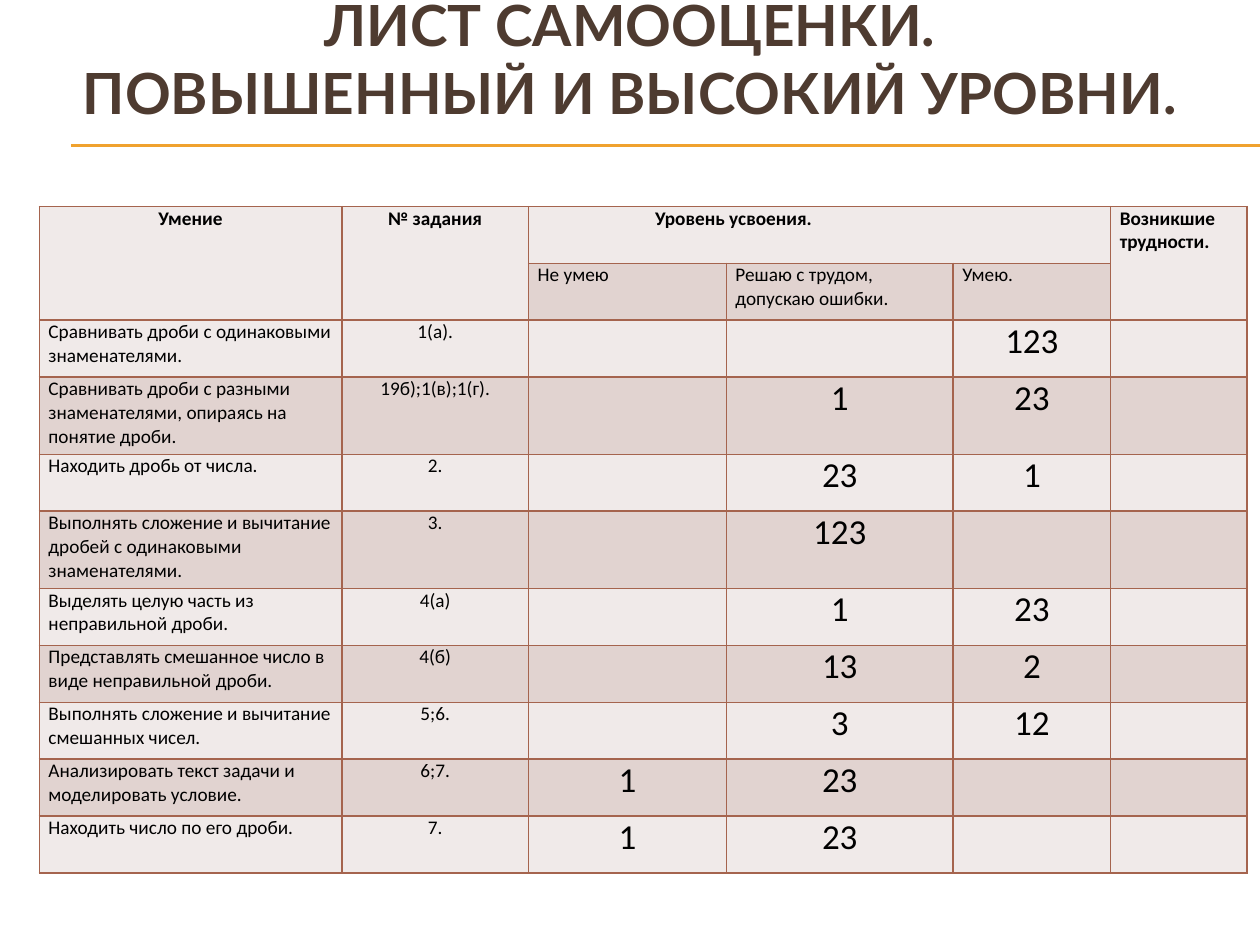
from dataclasses import dataclass

from lxml import etree
from pptx import Presentation
from pptx import util as u
from pptx.dml.color import RGBColor
from pptx.enum import shapes, text
from pptx.oxml.ns import qn


@dataclass(frozen=True)
class Theme:
    title_font: str = "Lato"
    body_font: str = "Calibri"
    title_size: float = 32.4
    body_size: float = 11
    mark_size: float = 20
    title_color: str = "4E3B30"
    body_color: str = "000000"
    rule_color: str = "F0A22E"
    border_color: str = "A5644E"
    light_band: str = "F0EAE9"
    dark_band: str = "E1D3D0"


LEFT, CENTER = text.PP_ALIGN.LEFT, text.PP_ALIGN.CENTER
CELL_INSET = 5.2
LEVEL_INDENT = 67
ROW_HEIGHT, TALL_ROW_HEIGHT = 32.5, 44.2
TALL_ROWS = (3, 5)
HEADER_ROWS = 2
COLUMN_WIDTHS = (172.8, 106.8, 113, 129.6, 90, 78)

TITLE_LINES = ("ЛИСТ САМООЦЕНКИ.", "ПОВЫШЕННЫЙ И ВЫСОКИЙ УРОВНИ.")
HEADINGS = {0: "Умение", 1: "№ задания", 2: "Уровень усвоения.",
            5: "Возникшие трудности."}
LEVELS = {2: "Не умею", 3: "Решаю с трудом, допускаю ошибки.", 4: "Умею."}
# Skill, task numbers, then marks: cannot do, with difficulty, can do
SKILLS = (
    ("Сравнивать дроби с одинаковыми знаменателями.", "1(а).", "", "", "123"),
    ("Сравнивать дроби с разными знаменателями, опираясь на понятие дроби.",
     "19б);1(в);1(г).", "", "1", "23"),
    ("Находить дробь от числа.", "2.", "", "23", "1"),
    ("Выполнять сложение и вычитание дробей с одинаковыми знаменателями.",
     "3.", "", "123", ""),
    ("Выделять целую часть из неправильной дроби.", "4(а)", "", "1", "23"),
    ("Представлять смешанное число в виде неправильной дроби.",
     "4(б)", "", "13", "2"),
    ("Выполнять сложение и вычитание смешанных чисел.", "5;6.", "", "3", "12"),
    ("Анализировать текст задачи и моделировать условие.",
     "6;7.", "1", "23", ""),
    ("Находить число по его дроби.", "7.", "1", "23", ""),
)


class SlideBuilder:
    def __init__(self, slide, theme):
        self.slide = slide
        self.theme = theme

    def run(self, paragraph, words, font, size, color, bold=False):
        run = paragraph.add_run()
        run.text = words
        run.font.name = font
        run.font.size = u.Pt(size)
        run.font.bold = bold
        run.font.color.rgb = RGBColor.from_string(color)

    def title(self, lines, left, top, width, height):
        box = self.slide.shapes.add_textbox(*map(u.Pt, (left, top, width, height)))
        frame = box.text_frame
        frame.word_wrap = True
        frame.vertical_anchor = text.MSO_ANCHOR.MIDDLE
        paragraph = frame.paragraphs[0]
        paragraph.alignment = CENTER
        for number, line in enumerate(lines):
            if number:
                paragraph.add_line_break()
            self.run(paragraph, line, self.theme.title_font,
                     self.theme.title_size, self.theme.title_color, bold=True)

    def rule(self, left, right, y):
        rule = self.slide.shapes.add_connector(
            shapes.MSO_CONNECTOR.STRAIGHT, *map(u.Pt, (left, y, right, y)))
        rule.line.width = u.Pt(0.75)
        rule.line.color.rgb = RGBColor.from_string(self.theme.rule_color)
        etree.SubElement(rule.element.spPr, qn("a:effectLst"))

    def table(self, left, top, widths, heights):
        """Add an empty table with banded fills and borders."""
        table = self.slide.shapes.add_table(
            len(heights), len(widths),
            *map(u.Pt, (left, top, sum(widths), sum(heights)))).table
        table.first_row = table.horz_banding = False
        for column, width in zip(table.columns, widths):
            column.width = u.Pt(width)
        for number, (row, height) in enumerate(zip(table.rows, heights)):
            row.height = u.Pt(height)
            band = self.theme.dark_band if number % 2 else self.theme.light_band
            for cell in row.cells:
                self.borders(cell)
                cell.fill.solid()
                cell.fill.fore_color.rgb = RGBColor.from_string(band)
        return table

    def borders(self, cell):
        properties = cell._tc.get_or_add_tcPr()
        for side in ("lnL", "lnR", "lnT", "lnB"):
            line = etree.SubElement(properties, qn(f"a:{side}"), w=str(u.Pt(1)))
            fill = etree.SubElement(line, qn("a:solidFill"))
            etree.SubElement(fill, qn("a:srgbClr"), val=self.theme.border_color)

    def cell_text(self, cell, words, align=LEFT, size=None, bold=False, indent=0):
        cell.margin_left = u.Pt(CELL_INSET + indent)
        cell.margin_right = u.Pt(CELL_INSET)
        cell.margin_top = cell.margin_bottom = 0
        paragraph = cell.text_frame.paragraphs[0]
        paragraph.alignment = align
        self.run(paragraph, words, self.theme.body_font,
                 size or self.theme.body_size, self.theme.body_color, bold)


def fill_assessment(builder, table):
    for column in (0, 1, 5):
        table.cell(0, column).merge(table.cell(1, column))
    table.cell(0, 2).merge(table.cell(0, 4))

    for column, heading in HEADINGS.items():
        builder.cell_text(table.cell(0, column), heading,
                          CENTER if column < 2 else LEFT, bold=True,
                          indent=LEVEL_INDENT if column == 2 else 0)
    for column, level in LEVELS.items():
        builder.cell_text(table.cell(1, column), level)

    for row, skill in enumerate(SKILLS, HEADER_ROWS):
        for column, words in enumerate(skill):
            if words:
                builder.cell_text(
                    table.cell(row, column), words,
                    CENTER if column else LEFT,
                    builder.theme.mark_size if column in LEVELS else None)


def main():
    deck = Presentation()
    deck.slide_width, deck.slide_height = u.Pt(720), u.Pt(540)
    builder = SlideBuilder(deck.slides.add_slide(deck.slide_layouts[6]), Theme())

    for y in (82.8, 83.4):
        builder.rule(40.5, 720, y)
    builder.title(TITLE_LINES, 0, 0, 720, 66.2)
    heights = [TALL_ROW_HEIGHT if row in TALL_ROWS else ROW_HEIGHT
               for row in range(HEADER_ROWS + len(SKILLS))]
    fill_assessment(builder, builder.table(22.5, 118, COLUMN_WIDTHS, heights))
    deck.save("out.pptx")


if __name__ == "__main__":
    main()
